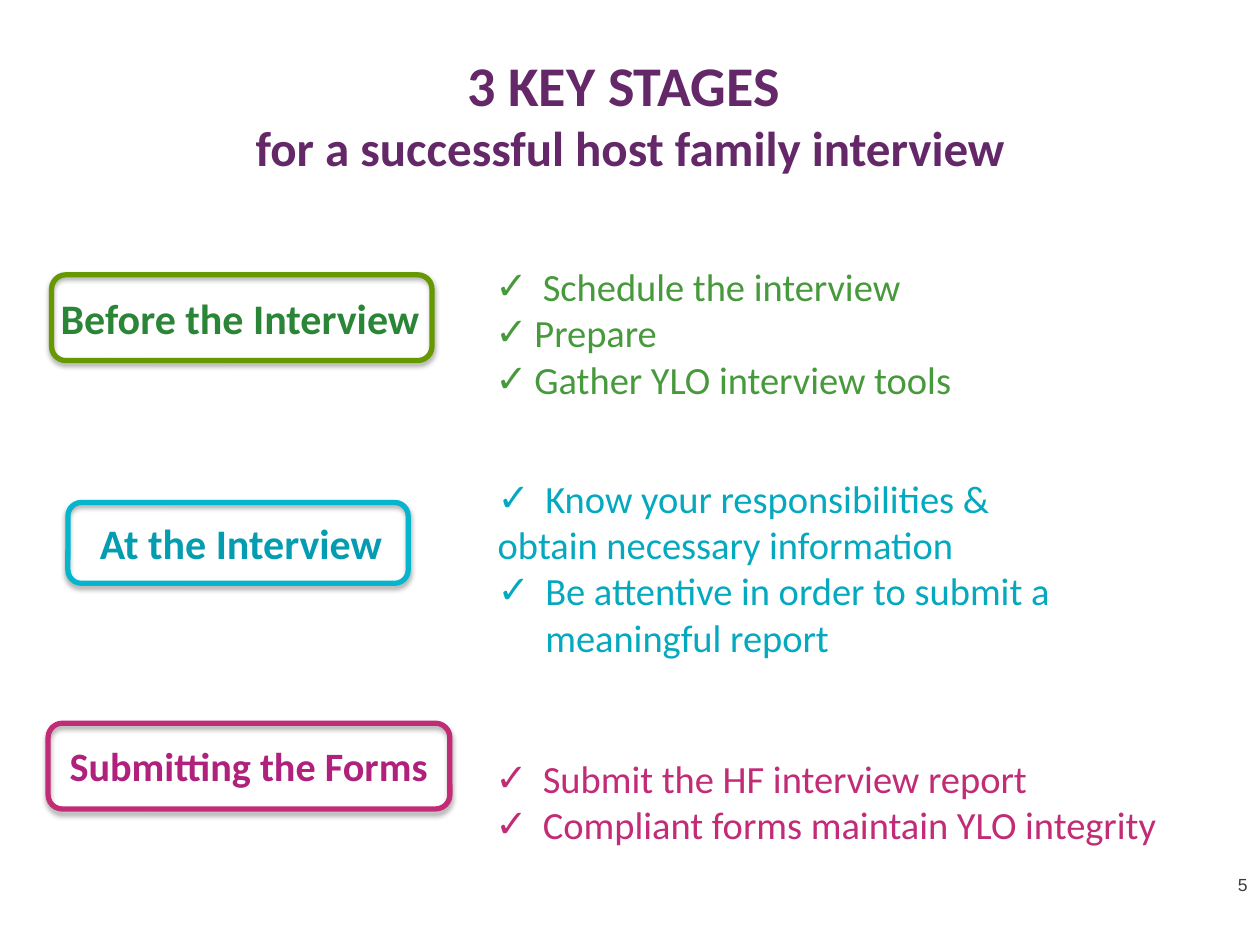
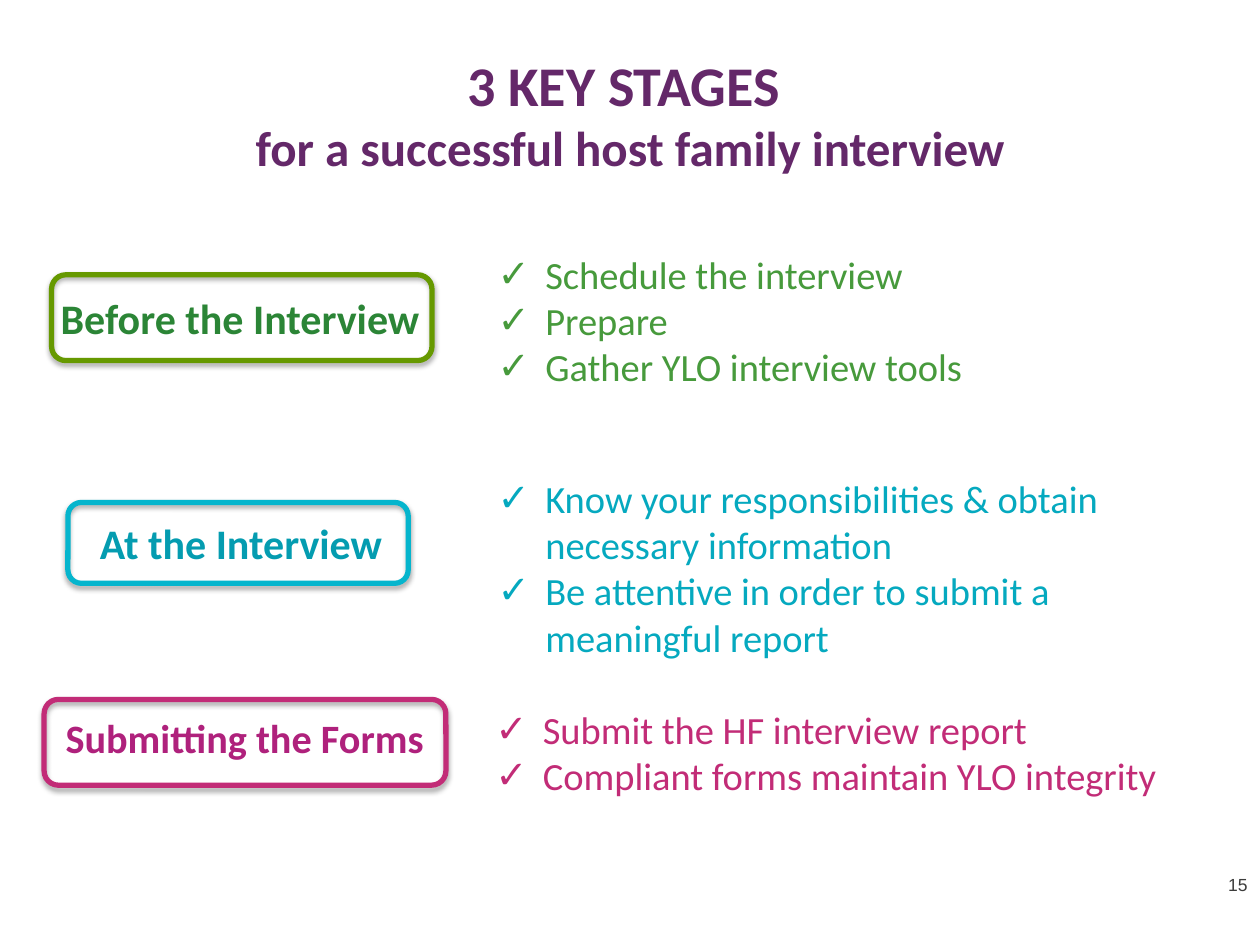
from dataclasses import dataclass

from lxml.etree import SubElement
from pptx import Presentation
from pptx.dml.color import RGBColor
from pptx.enum.shapes import MSO_SHAPE as Shape
from pptx.enum.text import MSO_ANCHOR as Anchor, MSO_AUTO_SIZE as AutoSize, PP_ALIGN as Align
from pptx.oxml.ns import qn
from pptx.util import Cm, Pt

# Shared colours and fonts
PURPLE = RGBColor(0x64, 0x28, 0x69)
GREY = RGBColor(0x3C, 0x3C, 0x3B)
OLIVE = RGBColor(0x66, 0x99, 0x00)
DARK_GREEN = RGBColor(0x2B, 0x85, 0x36)
GREEN = RGBColor(0x47, 0x9A, 0x3C)
CYAN = RGBColor(0x05, 0xB5, 0xCD)
DARK_TEAL = RGBColor(0x04, 0x9C, 0xB0)
TEAL = RGBColor(0x05, 0xA9, 0xBF)
PINK = RGBColor(0xC2, 0x2C, 0x77)
MAGENTA = RGBColor(0xAF, 0x21, 0x7C)
MAIN_FONT = "Calibri"
NUMBER_FONT = "Arial"

COMPARISON_LAYOUT = 4
WIDE, NARROW = 0.96, 0.79  # hanging indents of the lists, in cm


@dataclass
class Stage:
    name: str
    size: int
    line: RGBColor
    name_colour: RGBColor
    list_colour: RGBColor
    frame_size: tuple
    name_size: tuple
    list_size: tuple


BEFORE = Stage("Before the Interview", 24, OLIVE, DARK_GREEN, GREEN,
               (7.67, 1.73), (7.8, 1.27), (12.85, 3.07))
AT = Stage("At the Interview", 24, CYAN, DARK_TEAL, TEAL,
           (6.86, 1.63), (7.24, 1.27), (14.99, 4.01))
SUBMITTING = Stage("Submitting the Forms", 23, PINK, MAGENTA, PINK,
                   (8.1, 1.73), (8.26, 1.24), (14.4, 2.13))

# Each row: stage, frame corner, name shift from the frame, list corner,
# and the items with their indents (0 means no bullet)
AT_END = ("Be attentive in order to submit a meaningful report", WIDE)
FORM_ITEMS = [("Submit the HF interview report", WIDE),
              ("Compliant forms maintain YLO integrity", WIDE)]
OVERVIEW = [
    (BEFORE, (1.04, 5.54), (-0.1, 0.23), (9.73, 5.18),
     [("Schedule the interview", WIDE), ("Prepare", NARROW),
      ("Gather YLO interview tools", NARROW)]),
    (AT, (1.37, 10.13), (-0.13, 0.18), (9.78, 9.45),
     [("Know your responsibilities &", WIDE),
      ("obtain necessary information", 0), AT_END]),
    (SUBMITTING, (0.97, 14.58), (-0.08, 0.23), (9.73, 15.09), FORM_ITEMS),
]
REVIEW = [
    (BEFORE, (1.04, 5.54), (-0.1, 0.23), (9.78, 4.93),
     [("Schedule the interview", WIDE), ("Prepare", WIDE),
      ("Gather YLO interview tools", WIDE)]),
    (AT, (1.37, 10.13), (-0.13, 0.18), (9.78, 9.45),
     [("Know your responsibilities & obtain necessary information", WIDE), AT_END]),
    (SUBMITTING, (0.89, 14.1), (-0.08, 0.15), (9.73, 14.1), FORM_ITEMS),
]


def place(item, corner, size):
    item.left, item.top = map(Cm, corner)
    item.width, item.height = map(Cm, size)


def add_span(para, text, size, colour, bold=False, font=MAIN_FONT):
    span = para.add_run()
    span.text = text
    span.font.name = font
    span.font.size = Pt(size)
    span.font.bold = bold
    span.font.color.rgb = colour


def add_label(page, corner, size, align):
    """Add an empty text box and return its first paragraph."""
    box = page.shapes.add_textbox(*map(Cm, corner + size))
    box.text_frame.word_wrap = True
    para = box.text_frame.paragraphs[0]
    para.alignment = align
    return para


def set_bullet(para, indent):
    props = para._p.get_or_add_pPr()
    props.set("marL", str(Cm(indent)))
    props.set("indent", str(-Cm(indent)))
    if indent:
        SubElement(props, qn("a:buFont"), typeface=NUMBER_FONT)
        SubElement(props, qn("a:buChar"), char="✓")
    else:
        SubElement(props, qn("a:buNone"))


def add_title(page):
    title = page.shapes.title
    place(title, (0, 0.89), (25.4, 3.43))
    frame = title.text_frame
    frame.auto_size = AutoSize.NONE
    frame.vertical_anchor = Anchor.TOP
    para = frame.paragraphs[0]
    para.alignment = Align.CENTER
    add_span(para, "3 KEY STAGES ", 32, PURPLE, bold=True)
    para.add_line_break()
    add_span(para, "for a successful host family interview", 28, PURPLE, bold=True)


def add_frame(page, stage, corner):
    """Add the outlined rounded box with its soft shadow."""
    frame = page.shapes.add_shape(Shape.ROUNDED_RECTANGLE,
                                  *map(Cm, corner + stage.frame_size))
    frame.fill.background()
    frame.line.color.rgb = stage.line
    frame.line.width = Pt(3)
    frame.shadow.inherit = False
    effects = frame._element.spPr.find(qn("a:effectLst"))
    shadow = SubElement(effects, qn("a:outerShdw"), blurRad=str(Pt(3.1)),
                        dist=str(Pt(1.8)), dir="5400000", rotWithShape="0")
    black = SubElement(shadow, qn("a:srgbClr"), val="000000")
    SubElement(black, qn("a:alpha"), val="35000")


def fill_list(body, stage, corner, items):
    place(body, corner, stage.list_size)
    frame = body.text_frame
    frame.auto_size = AutoSize.NONE
    frame.vertical_anchor = Anchor.TOP
    for number, (text, indent) in enumerate(items):
        para = frame.add_paragraph() if number else frame.paragraphs[0]
        para.space_before = Pt(0)
        set_bullet(para, indent)
        add_span(para, text, 22, stage.list_colour)


def add_stage(page, body, stage, corner, shift, list_corner, items):
    add_frame(page, stage, corner)
    name_corner = (corner[0] + shift[0], corner[1] + shift[1])
    para = add_label(page, name_corner, stage.name_size, Align.CENTER)
    add_span(para, stage.name, stage.size, stage.name_colour, bold=True)
    fill_list(body, stage, list_corner, items)


def add_stages_page(deck, number, rows):
    page = deck.slides.add_slide(deck.slide_layouts[COMPARISON_LAYOUT])
    add_title(page)
    *bodies, spare = list(page.placeholders)[1:]
    spare._element.getparent().remove(spare._element)
    for body, row in zip(bodies, rows):
        add_stage(page, body, *row)
    # Page number
    para = add_label(page, (24.13, 17.5), (1.27, 0.5), Align.RIGHT)
    add_span(para, number, 10, GREY, font=NUMBER_FONT)


def main():
    deck = Presentation()
    deck.slide_width, deck.slide_height = Cm(25.4), Cm(19.05)
    add_stages_page(deck, "5", OVERVIEW)
    add_stages_page(deck, "15", REVIEW)
    deck.save("out.pptx")


if __name__ == "__main__":
    main()
